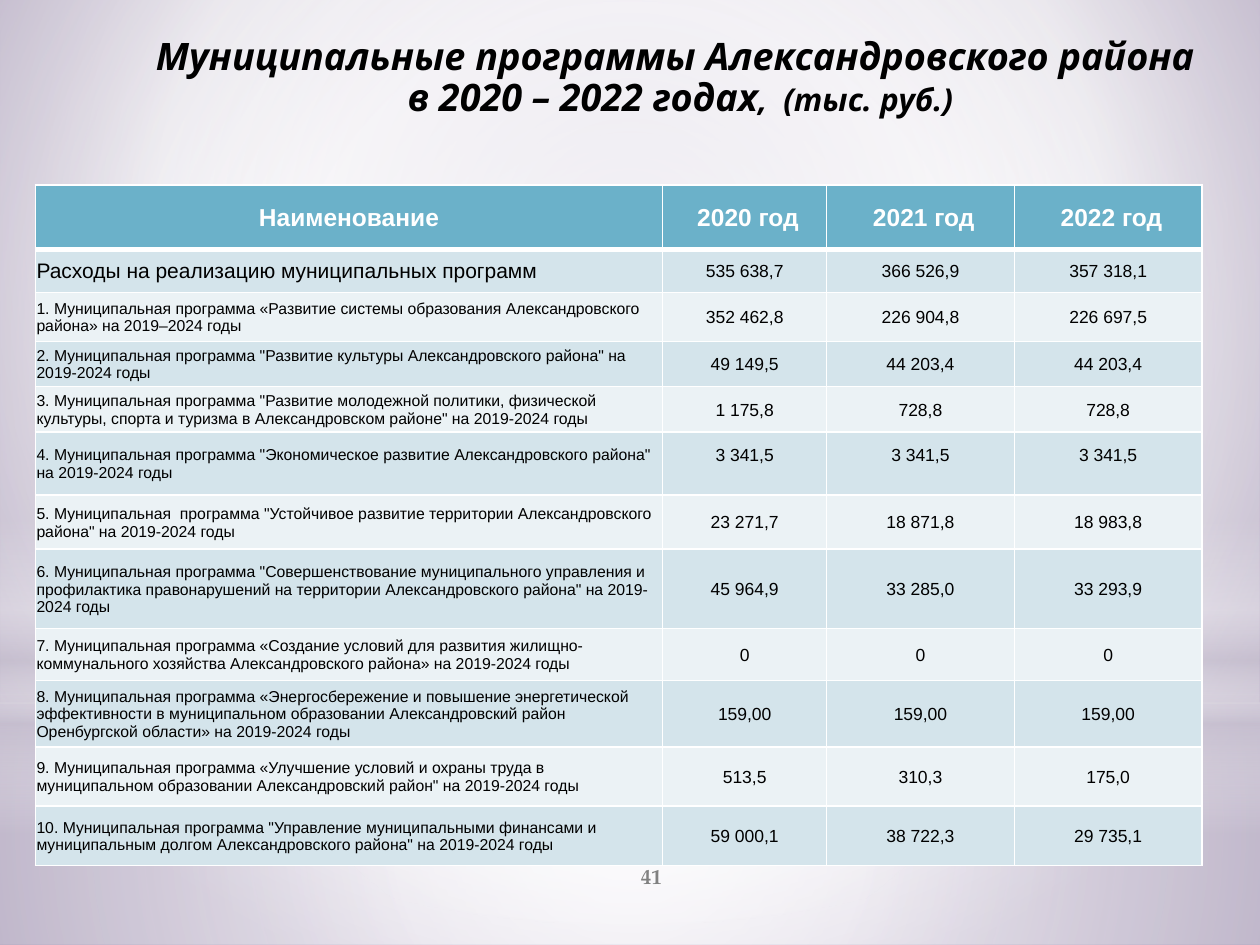
from lxml import etree
from pptx import Presentation
from pptx import util as u
from pptx.dml.color import RGBColor
from pptx.enum import shapes, text
from pptx.oxml.ns import qn

MID = (50, 50, 50, 50)
# kind, place, stops (position, colour, opacity), focus (None: top to bottom)
GLOWS = [
    ("RECTANGLE", (0, 5.58, 10, 1.92),
     [(0, "FFFFFF", 91), (37, "FFFFFF", 76), (100, "C9C2D1", 79)], MID),
    ("RECTANGLE", (0, 0, 10, 5.58),
     [(0, "FFFFFF", 89), (48, "FFFFFF", 62), (100, "C9C2D1", 79)], MID),
    ("RECTANGLE", (0, 4.12, 10, 2.5),
     [(0, "FFFFFF", 0), (29, "FFFFFF", 30), (45, "C9C2D1", 40),
      (55, "FFFFFF", 26), (65, "C9C2D1", 60), (100, "FFFFFF", 0)], None),
    ("OVAL", (0, 1.75, 10, 5.58),
     [(0, "FFFFFF", 100), (56, "FFFFFF", 0)], MID),
]
COLS = [4.98, 1.3, 1.49, 1.49]
HIGH = [0.51, 0.34, 0.39, 0.36, 0.36, 0.5, 0.43, 0.63, 0.41, 0.53, 0.47, 0.47]
RAISED = 5  # row whose figures sit one line higher
ROWS = [
    ("Наименование", " 2020 год", " 2021 год", " 2022 год"),
    ("Расходы на реализацию муниципальных программ",
     "535 638,7", "366 526,9", "357 318,1"),
    ("1. Муниципальная программа «Развитие системы образования "
     "Александровского района» на 2019–2024 годы",
     "352 462,8", "226 904,8", "226 697,5"),
    ('2. Муниципальная программа "Развитие культуры Александровского '
     'района" на 2019-2024 годы', "49 149,5", "44 203,4", "44 203,4"),
    ('3. Муниципальная программа "Развитие молодежной политики, физической '
     'культуры, спорта и туризма в Александровском районе" на 2019-2024 годы',
     "1 175,8", "728,8", "728,8"),
    ('4. Муниципальная программа "Экономическое развитие Александровского '
     'района" на 2019-2024 годы', "3 341,5", "3 341,5", "3 341,5"),
    ('5. Муниципальная  программа "Устойчивое развитие территории '
     'Александровского района" на 2019-2024 годы',
     "23 271,7", "18 871,8", "18 983,8"),
    ('6. Муниципальная программа "Совершенствование муниципального управления '
     'и профилактика правонарушений на территории Александровского района" '
     'на 2019-2024 годы', "45 964,9", "33 285,0", "33 293,9"),
    ("7. Муниципальная программа «Создание условий для развития "
     "жилищно-коммунального хозяйства Александровского района» "
     "на 2019-2024 годы", "0", "0", "0"),
    ("8. Муниципальная программа «Энергосбережение и повышение энергетической "
     "эффективности в муниципальном образовании Александровский район "
     "Оренбургской области» на 2019-2024 годы", "159,00", "159,00", "159,00"),
    ("9. Муниципальная программа «Улучшение условий и охраны труда в "
     'муниципальном образовании Александровский район" на 2019-2024 годы',
     "513,5", "310,3", "175,0"),
    ('10. Муниципальная программа "Управление муниципальными финансами и '
     'муниципальным долгом Александровского района" на 2019-2024 годы',
     "59 000,1", "38 722,3", "29 735,1"),
]


def rgb(code):
    return RGBColor.from_string(code)


def assign(item, values):
    for name, value in values.items():
        setattr(item, name, value)


def box(place):
    return [u.Inches(n) for n in place]


def blend(props, stops, focus):
    """Swap the solid fill in props for a gradient."""
    grad = etree.Element(qn("a:gradFill"), rotWithShape="1")
    marks = etree.SubElement(grad, qn("a:gsLst"))
    for pos, code, alpha in stops:
        mark = etree.SubElement(marks, qn("a:gs"), pos=str(pos * 1000))
        tint = etree.SubElement(mark, qn("a:srgbClr"), val=code)
        if alpha < 100:
            etree.SubElement(tint, qn("a:alpha"), val=str(alpha * 1000))
    if focus:
        path = etree.SubElement(grad, qn("a:path"), path="circle")
        etree.SubElement(path, qn("a:fillToRect"),
                         {k: str(n * 1000) for k, n in zip("ltrb", focus)})
    else:
        etree.SubElement(grad, qn("a:lin"), ang="5400000", scaled="0")
    props.replace(props.find(qn("a:solidFill")), grad)


def edge(cell, widths):
    """Draw white borders; widths maps side to points."""
    props = cell._tc.get_or_add_tcPr()
    for spot, side in enumerate("LRTB"):
        line = etree.Element(qn("a:ln" + side), w=str(u.Pt(widths.get(side, 1))))
        fill = etree.SubElement(line, qn("a:solidFill"))
        etree.SubElement(fill, qn("a:srgbClr"), val="FFFFFF")
        props.insert(spot, line)


class Page:
    head, dark, light = "6BB1C9", "D4E4EB", "EBF2F5"
    center = text.PP_ALIGN.CENTER

    def __init__(self, deck):
        self.slide = deck.slides.add_slide(deck.slide_layouts[5])
        self.items = self.slide.shapes

    def ground(self, stops, focus):
        self.slide.background.fill.solid()
        blend(next(self.slide.element.iter(qn("p:bgPr"))), stops, focus)

    def glow(self, kind, place, stops, focus):
        shape = self.items.add_shape(
            getattr(shapes.MSO_SHAPE, kind), *box(place))
        shape.shadow.inherit = False
        shape.line.fill.background()
        shape.fill.solid()
        blend(shape.element.spPr, stops, focus)

    def run(self, para, words, size, face="Arial", color="000000", **style):
        run = para.add_run()
        run.text = words
        assign(run.font, {"size": u.Pt(size), "name": face, **style})
        run.font.color.rgb = rgb(color)

    def title(self, place, lines, unit):
        title = self.items.title
        self.items.element.append(title.element)  # in front of the glows
        assign(title, dict(zip(("left", "top", "width", "height"), box(place))))
        assign(title.text_frame, {
            "word_wrap": True, "auto_size": text.MSO_AUTO_SIZE.NONE,
            "vertical_anchor": text.MSO_ANCHOR.TOP})
        para = title.text_frame.paragraphs[0]
        assign(para, {"alignment": self.center, "line_spacing": 0.9})
        style = {"face": "Open Sans", "bold": True, "italic": True}
        self.run(para, lines[0], 21.6, **style)
        para.add_line_break()
        self.run(para, lines[1], 21.6, **style)
        self.run(para, unit, 18, **style)

    def number(self, place, words):
        frame = self.items.add_textbox(*box(place)).text_frame
        assign(frame, {"word_wrap": True,
                       "vertical_anchor": text.MSO_ANCHOR.MIDDLE})
        para = frame.paragraphs[0]
        para.alignment = self.center
        self.run(para, words, 12, "TeX Gyre Pagella", "808080", bold=True)

    def table(self, place):
        table = self.items.add_table(len(ROWS), len(COLS), *box(place)).table
        table.horz_banding = False
        for col, width in zip(table.columns, COLS):
            col.width = u.Inches(width)
        for r, (row, high) in enumerate(zip(ROWS, HIGH)):
            table.rows[r].height = u.Inches(high)
            for c, words in enumerate(row):
                self.cell(table.cell(r, c), r, c, words)

    def cell(self, cell, r, c, words):
        low = 0.14 if r == RAISED and c else 0
        thin = u.Inches(0.01)
        assign(cell, {"vertical_anchor": text.MSO_ANCHOR.MIDDLE,
                      "margin_left": thin, "margin_right": thin,
                      "margin_top": thin, "margin_bottom": u.Inches(low)})
        cell.fill.solid()
        cell.fill.fore_color.rgb = rgb(
            self.head if r == 0 else self.dark if r % 2 else self.light)
        edge(cell, {0: {"B": 3}, 1: {"T": 3}}.get(r, {}))
        para = cell.text_frame.paragraphs[0]
        para.alignment = self.center if r == 0 or c else text.PP_ALIGN.LEFT
        size = 14 if r == 0 else 10 if c else 12 if r == 1 else 9
        self.run(para, words, size, bold=r == 0,
                 color="000000" if r else "FFFFFF")


def main():
    deck = Presentation()
    assign(deck, {"slide_width": u.Inches(10), "slide_height": u.Inches(7.5)})
    page = Page(deck)
    page.ground([(0, "C1B7CD", 100), (60, "FFFFFF", 100),
                 (100, "A191B5", 100)], (20, 10, 20, 60))
    for glow in GLOWS:
        page.glow(*glow)
    page.number((4.17, 6.75, 2, 0.4), "41")
    page.title((0.91, 0.25, 8.98, 1.09),
               ("Муниципальные программы Александровского района ",
                "в 2020 – 2022 годах"), ",  (тыс. руб.)")
    page.table((0.28, 1.47, 9.25, 5.4))
    deck.save("out.pptx")


if __name__ == "__main__":
    main()
